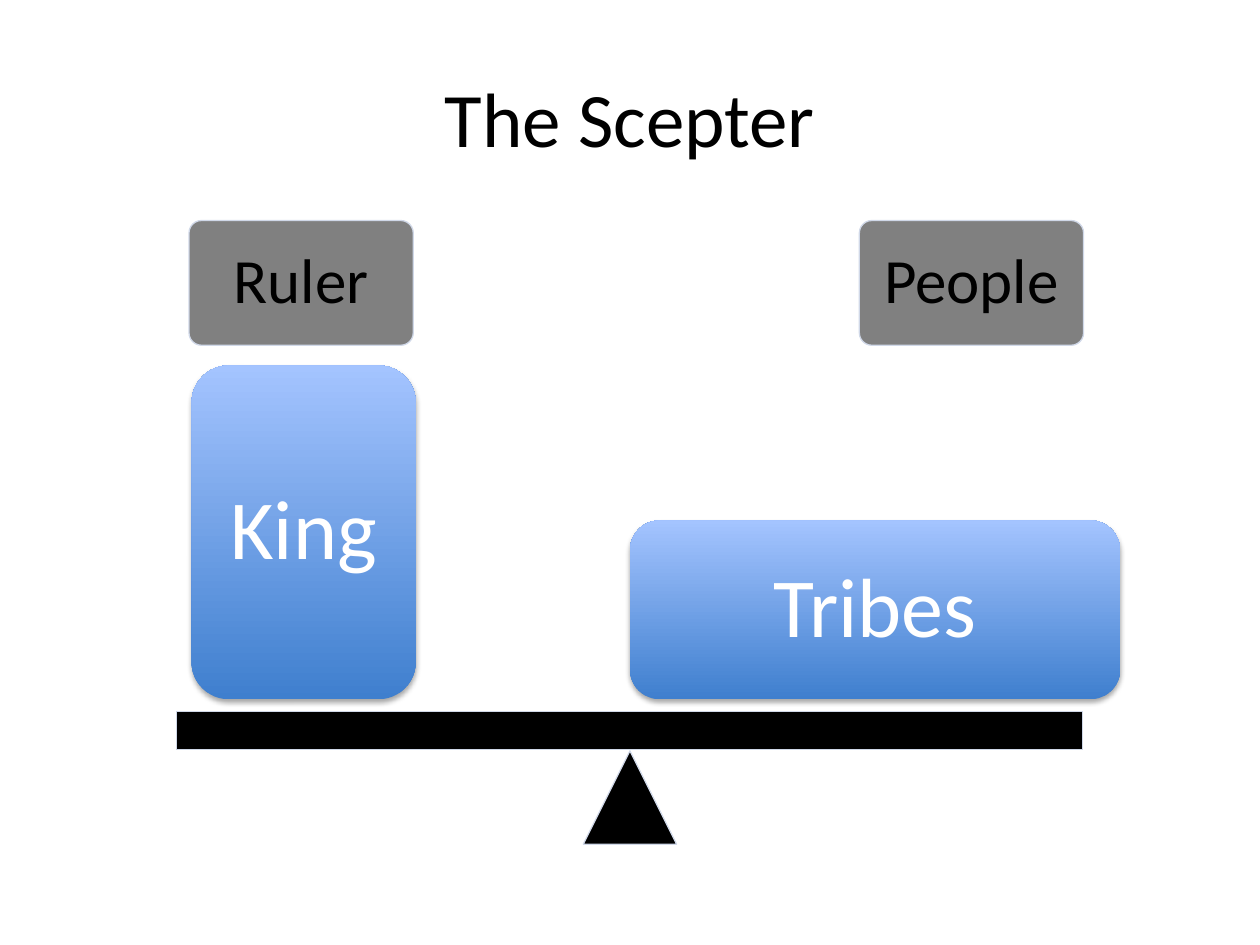
from lxml import etree
from pptx import Presentation
from pptx.dml.color import RGBColor
from pptx.enum.shapes import MSO_SHAPE
from pptx.enum.text import MSO_ANCHOR, PP_ALIGN
from pptx.oxml.ns import qn
from pptx.util import Inches, Pt

ROUNDED = MSO_SHAPE.ROUNDED_RECTANGLE
RECTANGLE = MSO_SHAPE.RECTANGLE
TRIANGLE = MSO_SHAPE.ISOSCELES_TRIANGLE
MIDDLE = MSO_ANCHOR.MIDDLE
CENTER = PP_ALIGN.CENTER

FONT = "Calibri"
BLACK, WHITE, GRAY, OUTLINE = "000000", "FFFFFF", "808080", "D0D8E8"
GRADIENT = ("3F7FCE", "A4C4FF")

TITLE = "The Scepter"
LABELS = [("Ruler", 1.5), ("People", 6.82)]
WEIGHTS = [("King", 1.52, 1.78, 2.65), ("Tribes", 5, 3.89, 1.42)]
LABEL_TOP, LABEL_WIDTH, LABEL_HEIGHT = 1.75, 1.78, 0.99
WEIGHT_BOTTOM = 5.55
BEAM = (1.4, 5.65, 7.19, 0.3)
PIVOT_SIZE, PIVOT_TOP = 0.74, 5.96
SLIDE_WIDTH, SLIDE_HEIGHT = 10, 7.5


def color(value):
    return RGBColor.from_string(value)


def write(shape, text, size, text_color, inset):
    frame = shape.text_frame
    frame.text = text
    frame.word_wrap = True
    frame.vertical_anchor = MIDDLE
    frame.margin_left = frame.margin_right = Inches(inset)
    frame.margin_top = frame.margin_bottom = Inches(inset)
    paragraph = frame.paragraphs[0]
    paragraph.alignment = CENTER
    font = paragraph.runs[0].font
    font.name, font.size = FONT, Pt(size)
    font.color.rgb = color(text_color)
    return paragraph


def add_shape(slide, kind, left, top, width, height):
    box = [Inches(value) for value in (left, top, width, height)]
    shape = slide.shapes.add_shape(kind, *box)
    shape.shadow.inherit = False
    return shape


def add_flat(slide, kind, box, fill):
    shape = add_shape(slide, kind, *box)
    shape.fill.solid()
    shape.fill.fore_color.rgb = color(fill)
    shape.line.color.rgb = color(OUTLINE)
    shape.line.width = Pt(0.75)
    return shape


def add_shadow(shape):
    effects = shape._element.spPr.find(qn("a:effectLst"))
    shadow = etree.SubElement(
        effects, qn("a:outerShdw"), blurRad=str(Pt(3.1)),
        dist=str(Pt(1.8)), dir="5400000", rotWithShape="0")
    shade = etree.SubElement(shadow, qn("a:srgbClr"), val=BLACK)
    etree.SubElement(shade, qn("a:alpha"), val="35000")


def add_weight(slide, text, left, width, height):
    shape = add_shape(slide, ROUNDED, left, WEIGHT_BOTTOM - height, width, height)
    shape.fill.gradient()
    shape.fill.gradient_angle = 90
    for stop, position, value in zip(shape.fill.gradient_stops, (0, 1), GRADIENT):
        stop.position = position
        stop.color.rgb = color(value)
    shape.line.fill.background()
    add_shadow(shape)
    write(shape, text, 48, WHITE, 0.2).line_spacing = 0.9


def main():
    presentation = Presentation()
    presentation.slide_width = Inches(SLIDE_WIDTH)
    presentation.slide_height = Inches(SLIDE_HEIGHT)
    slide = presentation.slides.add_slide(presentation.slide_layouts[5])

    title = slide.shapes.title
    title.left, title.top = Inches(0.5), Inches(0.3)
    title.width, title.height = Inches(9), Inches(1.25)
    write(title, TITLE, 44, BLACK, 0.1)

    for text, left in LABELS:
        box = (left, LABEL_TOP, LABEL_WIDTH, LABEL_HEIGHT)
        label = add_flat(slide, ROUNDED, box, GRAY)
        label.adjustments[0] = 0.1
        write(label, text, 36, BLACK, 0.15).line_spacing = 0.9

    pivot_left = (SLIDE_WIDTH - PIVOT_SIZE) / 2
    add_flat(slide, TRIANGLE, (pivot_left, PIVOT_TOP, PIVOT_SIZE, PIVOT_SIZE), BLACK)
    add_flat(slide, RECTANGLE, BEAM, BLACK)

    for weight in WEIGHTS:
        add_weight(slide, *weight)

    presentation.save("out.pptx")


if __name__ == "__main__":
    main()
